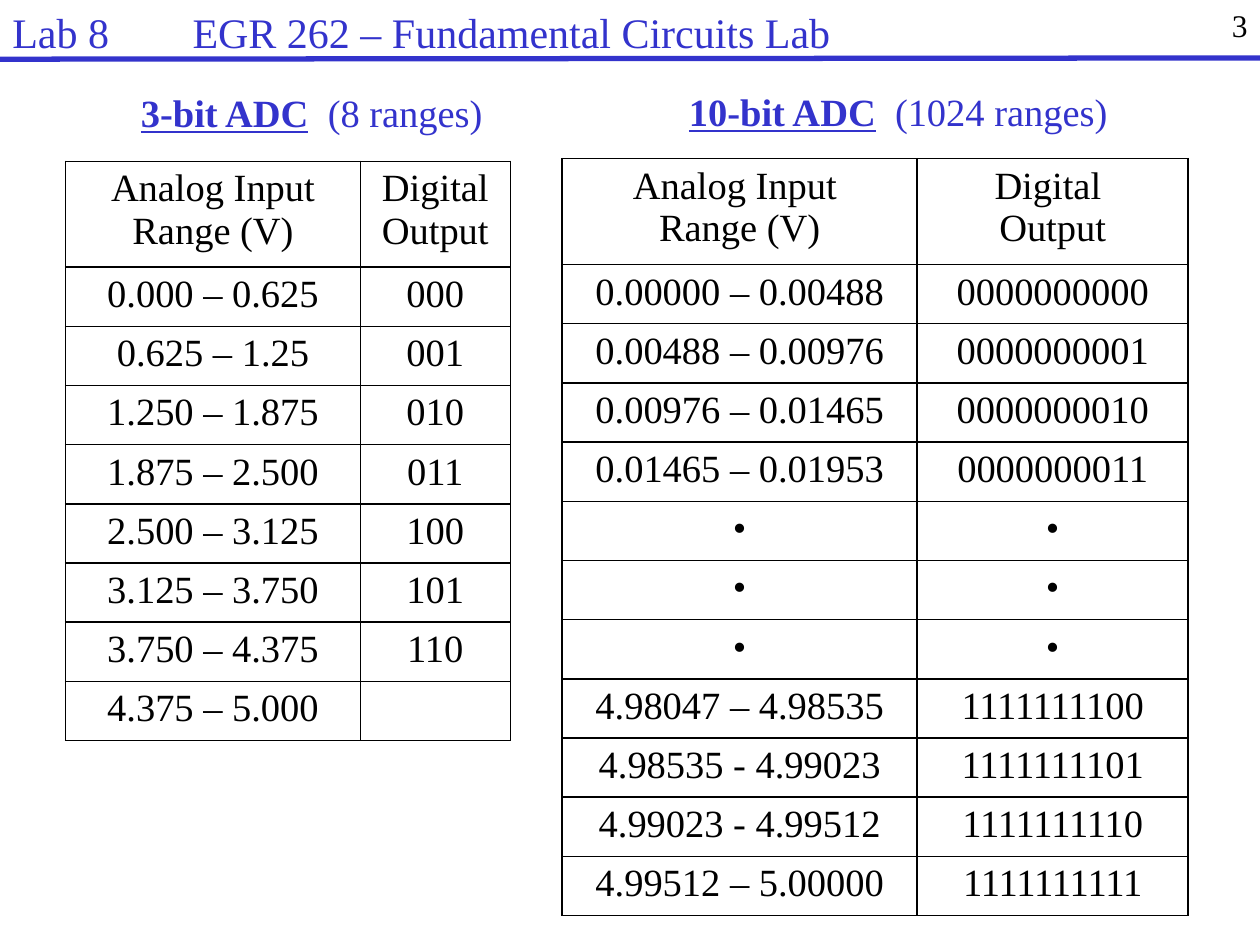
from dataclasses import dataclass

from lxml.etree import SubElement
from pptx import Presentation
from pptx.dml.color import RGBColor
from pptx.enum.shapes import MSO_CONNECTOR
from pptx.enum.text import MSO_AUTO_SIZE, PP_ALIGN
from pptx.oxml.ns import qn
from pptx.util import Inches, Pt

BLACK = RGBColor(0x00, 0x00, 0x00)
BLUE = RGBColor(0x33, 0x33, 0xCC)
FONT = "Times New Roman"
BODY_SIZE = 22
HEADER_HEIGHT, ROW_HEIGHT = 0.84, 0.47


@dataclass
class ConverterTable:
    """A heading and the table of input ranges and output codes below it."""
    name: str
    ranges: str
    heading_at: tuple[float, float, float, float]
    table_at: tuple[float, float]
    widths: tuple[float, float]
    rows: list[tuple[str, str]]


DOTS = ("•", "•")
CONVERTERS = [
    ConverterTable(
        "3-bit ADC", "  (8 ranges)", (1.02, 0.66, 2.95, 0.47), (0.52, 1.28), (2.34, 1.19),
        [("Analog Input Range (V)", "Digital Output"),
         ("0.000 – 0.625", "000"),
         ("0.625 – 1.25", "001"),
         ("1.250 – 1.875", "010"),
         ("1.875 – 2.500", "011"),
         ("2.500 – 3.125", "100"),
         ("3.125 – 3.750", "101"),
         ("3.750 – 4.375", "110"),
         ("4.375 – 5.000", "")]),
    ConverterTable(
        "10-bit ADC", "  (1024 ranges)", (5.37, 0.65, 3.56, 0.47), (4.46, 1.26), (2.82, 2.15),
        [("Analog Input \nRange (V)", "Digital \nOutput"),
         ("0.00000 – 0.00488", "0000000000"),
         ("0.00488 – 0.00976", "0000000001"),
         ("0.00976 – 0.01465", "0000000010"),
         ("0.01465 – 0.01953", "0000000011"),
         DOTS, DOTS, DOTS,
         ("4.98047 – 4.98535", "1111111100"),
         ("4.98535 - 4.99023", "1111111101"),
         ("4.99023 - 4.99512", "1111111110"),
         ("4.99512 – 5.00000", "1111111111")]),
]


def add_span(para, text: str, size: float, color: RGBColor, strong: bool = False) -> None:
    span = para.add_run()
    span.text = text
    span.font.name = FONT
    span.font.size = Pt(size)
    span.font.color.rgb = color
    span.font.bold = span.font.underline = strong


def add_box(page, at: tuple[float, float, float, float], wrap: bool = True):
    """Add a text box and return its first paragraph."""
    frame = page.shapes.add_textbox(*map(Inches, at)).text_frame
    frame.word_wrap = wrap
    if not wrap:
        frame.auto_size = MSO_AUTO_SIZE.SHAPE_TO_FIT_TEXT
    return frame.paragraphs[0]


def set_borders(cell) -> None:
    properties = cell._tc.get_or_add_tcPr()
    for side in ("a:lnL", "a:lnR", "a:lnT", "a:lnB"):
        line = SubElement(properties, qn(side), w=str(Pt(1)))
        fill = SubElement(line, qn("a:solidFill"))
        SubElement(fill, qn("a:srgbClr"), val=str(BLACK))


def fill_cell(cell, text: str) -> None:
    set_borders(cell)
    cell.fill.background()
    frame = cell.text_frame
    for index, line in enumerate(text.split("\n")):
        para = frame.add_paragraph() if index else frame.paragraphs[0]
        para.alignment = PP_ALIGN.CENTER
        if line:
            add_span(para, line, BODY_SIZE, BLACK)


def add_converter(page, converter: ConverterTable) -> None:
    heading = add_box(page, converter.heading_at, wrap=False)
    add_span(heading, converter.name, BODY_SIZE, BLUE, strong=True)
    add_span(heading, converter.ranges, BODY_SIZE, BLUE)

    count = len(converter.rows)
    height = HEADER_HEIGHT + ROW_HEIGHT * (count - 1)
    table = page.shapes.add_table(
        count, 2, *map(Inches, (*converter.table_at, sum(converter.widths), height))).table
    table.first_row = table.horz_banding = False
    for column, width in zip(table.columns, converter.widths):
        column.width = Inches(width)
    for index, texts in enumerate(converter.rows):
        table.rows[index].height = Inches(ROW_HEIGHT if index else HEADER_HEIGHT)
        for cell, text in zip(table.rows[index].cells, texts):
            fill_cell(cell, text)


def main() -> None:
    deck = Presentation()
    deck.slide_width, deck.slide_height = Inches(10), Inches(7.5)
    page = deck.slides.add_slide(deck.slide_layouts[6])

    # Page number
    number = add_box(page, (7.92, 0, 2.08, 0.5))
    number.alignment = PP_ALIGN.RIGHT
    add_span(number, "3", 18, BLACK)

    # Title, with a tab stop between lab and course, and the rule below
    rule = page.shapes.add_connector(
        MSO_CONNECTOR.STRAIGHT, Inches(0), Inches(0.47), Inches(10), Inches(0.46))
    rule.line.color.rgb = BLUE
    rule.line.width = Pt(3)
    SubElement(rule._element.spPr, qn("a:effectLst"))
    title = add_box(page, (0, 0, 9.76, 0.43))
    stops = SubElement(title._p.get_or_add_pPr(), qn("a:tabLst"))
    SubElement(stops, qn("a:tab"), pos=str(Inches(1.43)), algn="l")
    add_span(title, "Lab 8\tEGR 262 – Fundamental Circuits Lab", 24, BLUE)

    # Converter tables
    for converter in CONVERTERS:
        add_converter(page, converter)

    deck.save("out.pptx")


if __name__ == "__main__":
    main()
